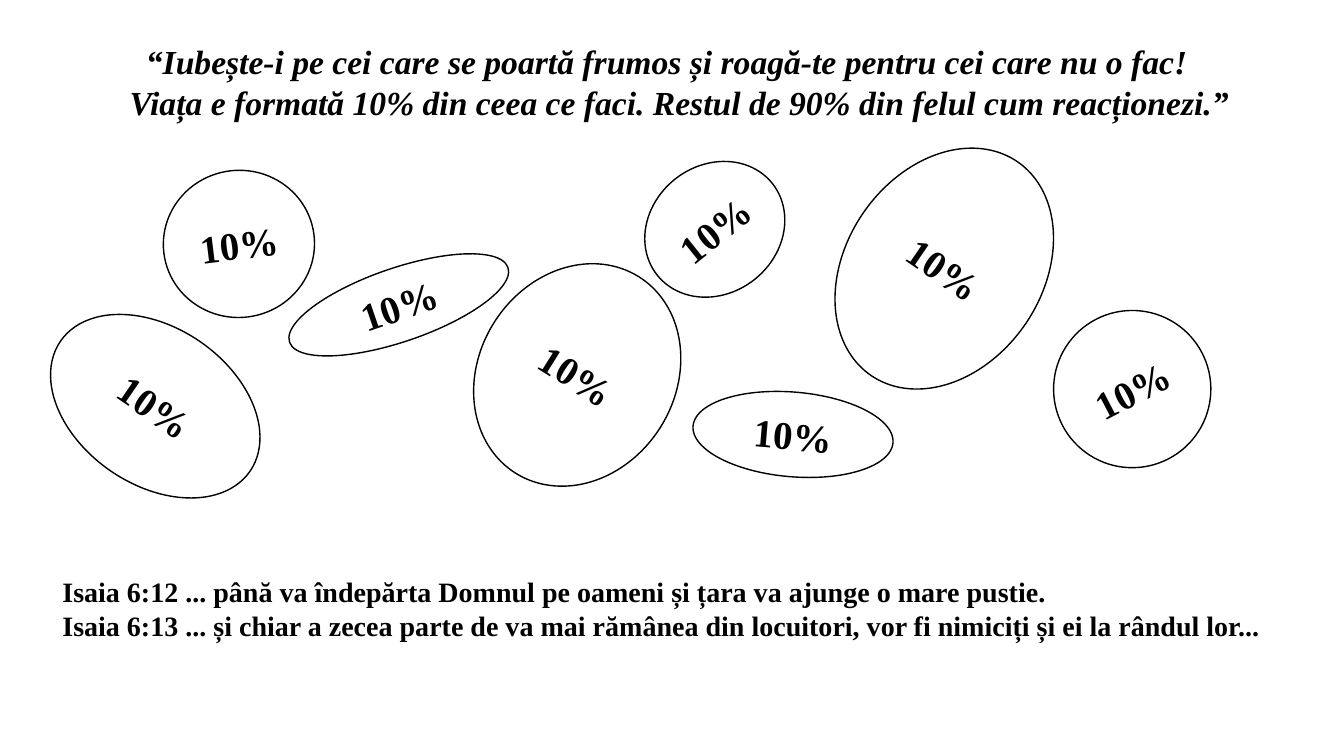
from pptx import Presentation
from pptx import util as u
from pptx.dml import color
from pptx.enum import shapes, text


def rgb(value):
    return color.RGBColor.from_string(value)


def style(tf, size, italic=False):
    for p in tf.paragraphs:
        p.line_spacing = 1.0
        p.space_before = u.Pt(0)
        for r in p.runs:
            r.font.name = "Times New Roman"
            r.font.size = u.Pt(size)
            r.font.bold = True
            r.font.italic = italic
            r.font.color.rgb = rgb("000000")


prs = Presentation()
prs.slide_width = u.Inches(13.33)
prs.slide_height = u.Inches(7.5)
s = prs.slides.add_slide(prs.slide_layouts[5])

quote = s.shapes.title
quote.left, quote.top = u.Inches(0.75), u.Inches(0.36)
quote.width, quote.height = u.Inches(11.81), u.Inches(0.91)
tf = quote.text_frame
tf.text = (
    "“Iubește-i pe cei care se poartă frumos și roagă-te pentru cei care nu o fac! \n"
    "Viața e formată 10% din ceea ce faci. Restul de 90% din felul cum reacționezi.”"
)
tf.word_wrap = True
tf.auto_size = text.MSO_AUTO_SIZE.SHAPE_TO_FIT_TEXT
tf.vertical_anchor = text.MSO_ANCHOR.TOP
for p in tf.paragraphs:
    p.alignment = text.PP_ALIGN.CENTER
tf.paragraphs[1]._p.get_or_add_pPr().set("marL", str(u.Pt(12)))
style(tf, 24, italic=True)

ellipses = [
    (0.4, 3.25, 2.28, 1.56, 34.4),
    (1.62, 1.69, 1.5, 1.46, -7.1),
    (10.45, 3.08, 1.56, 1.56, -27.5),
    (2.81, 2.66, 2.29, 0.73, -18.9),
    (4.75, 2.57, 1.95, 2.3, 32.1),
    (6.36, 1.64, 1.46, 1.27, -38.6),
    (8.39, 1.38, 1.95, 2.57, 34.4),
    (6.87, 3.89, 1.99, 0.84, 4.8),
]
for *box, angle in ellipses:
    sp = s.shapes.add_shape(shapes.MSO_SHAPE.OVAL, *map(u.Inches, box))
    sp.rotation = angle
    sp.shadow.inherit = False
    sp.fill.solid()
    sp.fill.fore_color.rgb = rgb("FFFFFF")
    sp.line.color.rgb = rgb("000000")
    sp.line.width = u.Pt(1)
    tf = sp.text_frame
    tf.text = "10%"
    tf.vertical_anchor = text.MSO_ANCHOR.MIDDLE
    tf.paragraphs[0].alignment = text.PP_ALIGN.CENTER
    style(tf, 28)

verses = s.shapes.add_textbox(u.Inches(0.52), u.Inches(5.65), u.Inches(12.32), u.Inches(0.77))
tf = verses.text_frame
tf.word_wrap = True
tf.auto_size = text.MSO_AUTO_SIZE.SHAPE_TO_FIT_TEXT
tf.text = (
    "Isaia 6:12 ... până va îndepărta Domnul pe oameni și țara va ajunge o mare pustie.\n"
    "Isaia 6:13 ... și chiar a zecea parte de va mai rămânea din locuitori, "
    "vor fi nimiciți și ei la rândul lor..."
)
style(tf, 20)

prs.save("out.pptx")
